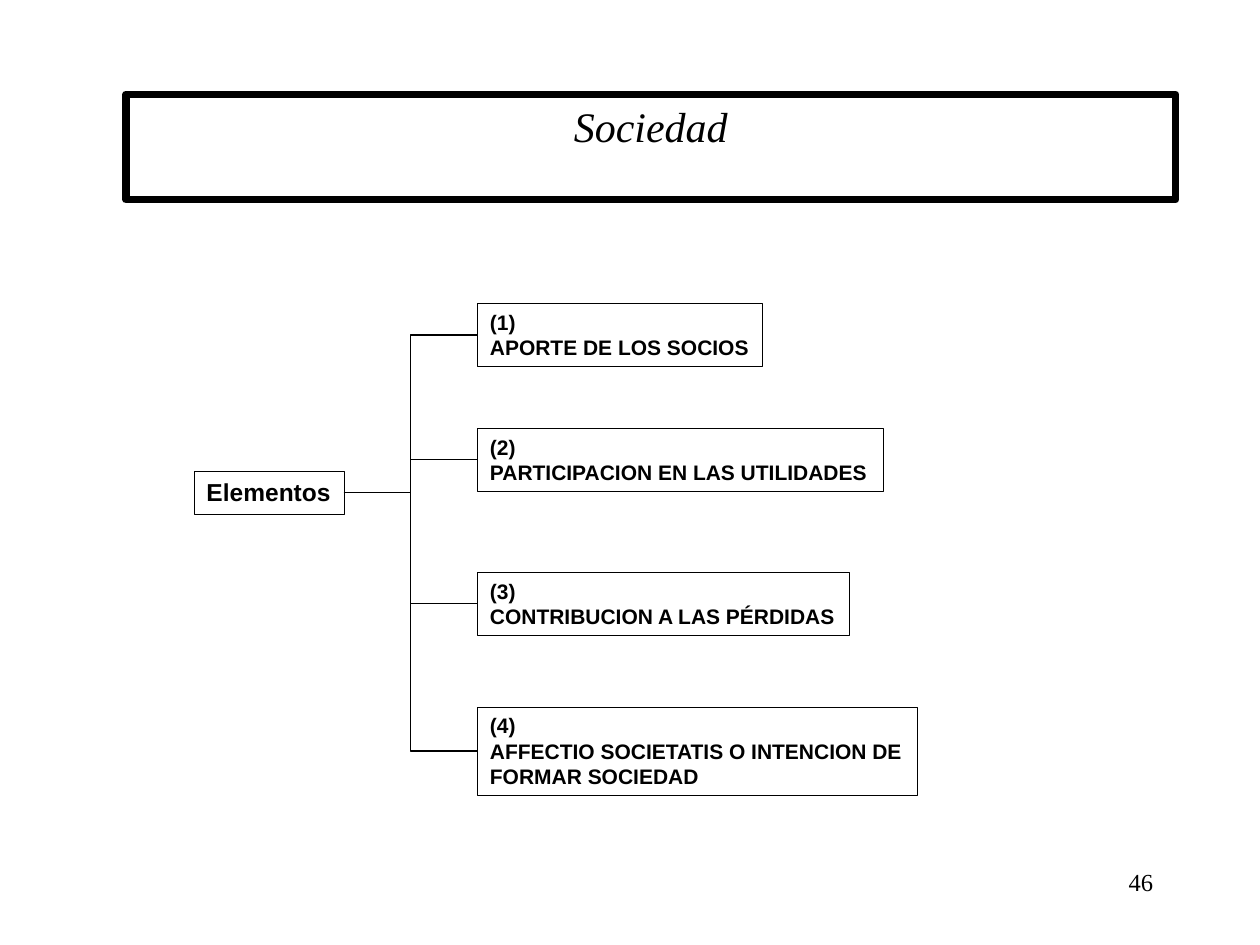
from dataclasses import dataclass

from lxml.etree import SubElement
from pptx import Presentation
from pptx.dml.color import RGBColor
from pptx.enum.shapes import MSO_CONNECTOR, MSO_SHAPE
from pptx.enum.text import MSO_ANCHOR, MSO_AUTO_SIZE, PP_ALIGN
from pptx.oxml.ns import qn
from pptx.util import Inches, Pt


@dataclass(frozen=True)
class Theme:
    ink: RGBColor = RGBColor(0, 0, 0)
    serif: str = "Times New Roman"
    sans: str = "Arial"
    title_size: int = 24
    label_size: int = 14
    element_size: int = 12
    title_line: float = 4.5
    box_line: float = 0.25
    connector_line: float = 0.75


THEME = Theme()
ELEMENT_LEFT = 3.79
LEFT_SITE, RIGHT_SITE = 1, 3
ELEMENTS = [
    ("APORTE DE LOS SOCIOS", 2.41, 2.26, 0.5, False),
    ("PARTICIPACION EN LAS UTILIDADES", 3.4, 3.22, 0.5, False),
    ("CONTRIBUCION A LAS PÉRDIDAS", 4.54, 2.95, 0.5, False),
    ("AFFECTIO SOCIETATIS O INTENCION DE FORMAR SOCIEDAD", 5.61, 3.49, 0.7, True),
]


def write_text(shape, lines, font_name, size, alignment=PP_ALIGN.LEFT,
               bold=False, italic=False, wrap=True):
    frame = shape.text_frame
    frame.text = "\n".join(lines)
    frame.word_wrap = wrap
    frame.vertical_anchor = MSO_ANCHOR.TOP
    for paragraph in frame.paragraphs:
        paragraph.alignment = alignment
        font = paragraph.font
        font.name, font.size = font_name, Pt(size)
        font.bold, font.italic = bold, italic
        font.color.rgb = THEME.ink


def outline(shape, width):
    shape.line.color.rgb = THEME.ink
    shape.line.width = Pt(width)


def set_title(slide, text):
    title = slide.shapes.title
    title.left, title.top = Inches(1), Inches(0.75)
    title.width, title.height = Inches(8.33), Inches(0.56)
    write_text(title, [text], THEME.serif, THEME.title_size, PP_ALIGN.CENTER, italic=True)
    title.text_frame.auto_size = MSO_AUTO_SIZE.SHAPE_TO_FIT_TEXT
    outline(title, THEME.title_line)


def add_box(slide, lines, left, top, width, height, size, wrap=False):
    box = slide.shapes.add_shape(MSO_SHAPE.RECTANGLE, Inches(left), Inches(top),
                                 Inches(width), Inches(height))
    box.shadow.inherit = False
    box.fill.background()
    outline(box, THEME.box_line)
    write_text(box, lines, THEME.sans, size, bold=True, wrap=wrap)
    box.text_frame.auto_size = MSO_AUTO_SIZE.SHAPE_TO_FIT_TEXT
    return box


def connect(slide, source, target):
    connector = slide.shapes.add_connector(MSO_CONNECTOR.ELBOW, 0, 0, 0, 0)
    connector.begin_connect(source, RIGHT_SITE)
    connector.end_connect(target, LEFT_SITE)
    outline(connector, THEME.connector_line)
    SubElement(connector._element.spPr, qn("a:effectLst"))


def add_page_number(slide, number):
    box = slide.shapes.add_textbox(Inches(7.17), Inches(6.83), Inches(2.08), Inches(0.5))
    write_text(box, [number], THEME.serif, THEME.label_size, PP_ALIGN.RIGHT)


def main():
    presentation = Presentation()
    presentation.slide_width, presentation.slide_height = Inches(10), Inches(7.5)
    slide = presentation.slides.add_slide(presentation.slide_layouts[5])
    set_title(slide, "Sociedad")
    root = add_box(slide, ["Elementos"], 1.54, 3.74, 1.19, 0.34, THEME.label_size)
    for number, (text, top, width, height, wrap) in enumerate(ELEMENTS, start=1):
        element = add_box(slide, [f"({number})", text], ELEMENT_LEFT, top,
                          width, height, THEME.element_size, wrap)
        connect(slide, root, element)
    add_page_number(slide, "46")
    presentation.save("out.pptx")


if __name__ == "__main__":
    main()
